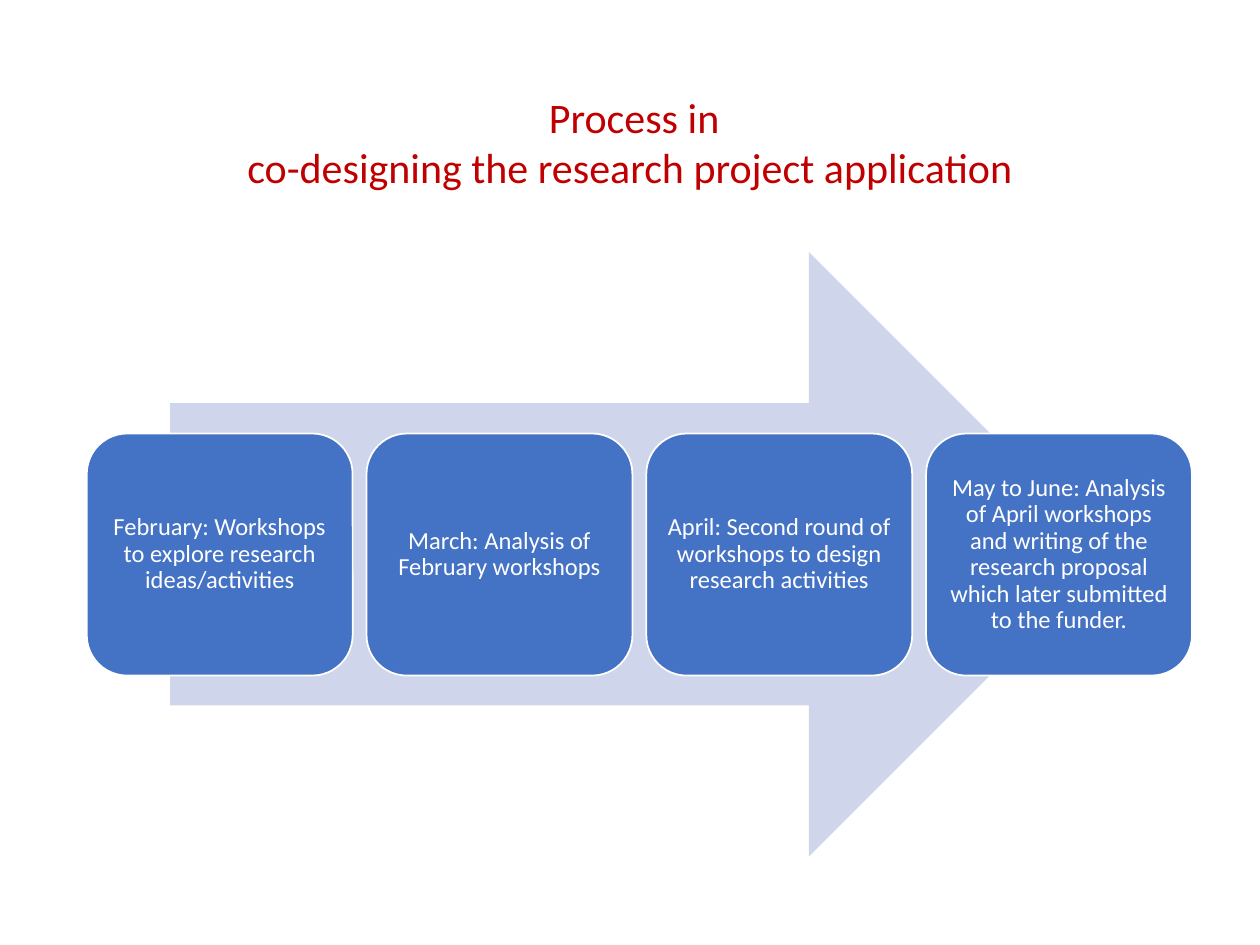
from pptx import Presentation
from pptx.dml.color import RGBColor
from pptx.enum.shapes import MSO_SHAPE
from pptx.enum.text import MSO_ANCHOR, MSO_AUTO_SIZE, PP_ALIGN
from pptx.util import Cm, Pt

FONT = "Calibri"
STEPS = [
    "February: Workshops to explore research ideas/activities",
    "March: Analysis of February workshops",
    "April: Second round of workshops to design research activities",
    "May to June: Analysis of April workshops and writing of the "
    "research proposal which later submitted to the funder.",
]
# Step boxes, in cm
STEP_LEFT, STEP_TOP, STEP_WIDTH, STEP_HEIGHT = 1.75, 8.74, 5.36, 4.88
STEP_GAP = 0.28


def rgb(color):
    return RGBColor.from_string(color)


def format_text(tf, size, color):
    tf.word_wrap = True
    tf.auto_size = MSO_AUTO_SIZE.NONE
    tf.vertical_anchor = MSO_ANCHOR.MIDDLE
    for p in tf.paragraphs:
        p.alignment = PP_ALIGN.CENTER
        for r in p.runs:
            r.font.name = FONT
            r.font.size = Pt(size)
            r.font.color.rgb = rgb(color)


def set_title(s, text):
    sp = s.shapes.title
    sp.left, sp.top, sp.width, sp.height = Cm(1.75), Cm(1.02), Cm(21.9), Cm(3.68)
    tf = sp.text_frame
    tf.text = text
    format_text(tf, 24, "C00000")
    # First-line indent
    tf.paragraphs[0]._p.get_or_add_pPr().set("indent", str(Cm(0.36)))


def add_block(s, kind, left, top, width, height, fill):
    sp = s.shapes.add_shape(kind, Cm(left), Cm(top), Cm(width), Cm(height))
    sp.shadow.inherit = False
    sp.fill.solid()
    sp.fill.fore_color.rgb = rgb(fill)
    sp.line.fill.background()
    return sp


def add_step(s, left, text):
    sp = add_block(s, MSO_SHAPE.ROUNDED_RECTANGLE, left, STEP_TOP,
                   STEP_WIDTH, STEP_HEIGHT, "4472C4")
    sp.line.color.rgb = rgb("FFFFFF")
    sp.line.width = Pt(1)
    tf = sp.text_frame
    tf.margin_left = tf.margin_right = tf.margin_top = tf.margin_bottom = Cm(0.15)
    tf.text = text
    tf.paragraphs[0].line_spacing = 0.9
    format_text(tf, 14, "FFFFFF")


def main():
    prs = Presentation()
    prs.slide_width, prs.slide_height = Cm(25.4), Cm(19.05)
    s = prs.slides.add_slide(prs.slide_layouts[5])

    # Title
    set_title(s, "Process in \vco-designing the research project application")

    # Arrow behind the steps
    add_block(s, MSO_SHAPE.RIGHT_ARROW, 3.43, 5.08, 18.97, 12.19, "CFD5EA")

    # Steps from left to right
    for i, text in enumerate(STEPS):
        add_step(s, STEP_LEFT + i * (STEP_WIDTH + STEP_GAP), text)

    prs.save("out.pptx")


if __name__ == "__main__":
    main()
